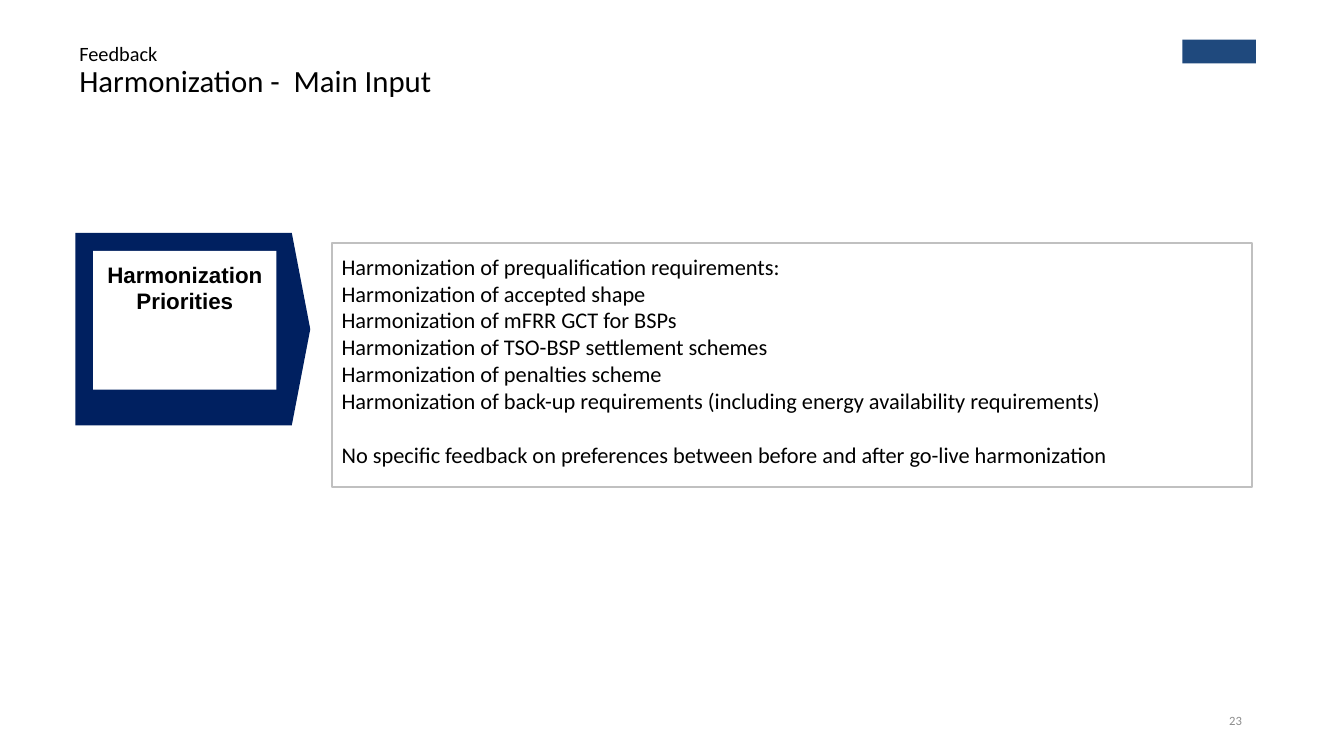
from pptx import Presentation
from pptx.dml.color import RGBColor
from pptx.enum.shapes import MSO_SHAPE
from pptx.enum.text import MSO_ANCHOR, PP_ALIGN
from pptx.util import Cm, Pt

RECTANGLE, ARROW = MSO_SHAPE.RECTANGLE, MSO_SHAPE.PENTAGON
TOP, MIDDLE = MSO_ANCHOR.TOP, MSO_ANCHOR.MIDDLE
LEFT, CENTER, RIGHT = PP_ALIGN.LEFT, PP_ALIGN.CENTER, PP_ALIGN.RIGHT

NAVY, BLUE, SILVER, GREY = "002060", "1F497D", "C0C0C0", "8C8C8C"
BLACK, WHITE = "000000", "FFFFFF"

PRIORITIES = [
    "Harmonization of prequalification requirements:",
    "Harmonization of accepted shape",
    "Harmonization of mFRR GCT for BSPs",
    "Harmonization of TSO-BSP settlement schemes",
    "Harmonization of penalties scheme",
    "Harmonization of back-up requirements (including energy availability requirements)",
]
REMARK = "No specific feedback on preferences between before and after go-live harmonization"


def color(hex_code):
    return RGBColor.from_string(hex_code)


def write(para, text, size=16, font="Calibri", fill=BLACK, bold=False, align=LEFT):
    para.alignment = align
    span = para.add_run()
    span.text = text
    span.font.size = Pt(size)
    span.font.name = font
    span.font.bold = bold
    span.font.color.rgb = color(fill)


def add_box(page, kind, box, fill=None, line=None):
    shape = page.shapes.add_shape(kind, *map(Cm, box))
    shape.shadow.inherit = False
    if fill:
        shape.fill.solid()
        shape.fill.fore_color.rgb = color(fill)
    else:
        shape.fill.background()
    if line:
        shape.line.color.rgb = color(line)
        shape.line.width = Pt(1.5)
    else:
        shape.line.fill.background()
    return shape


def set_frame(shape, anchor, inset=None):
    frame = shape.text_frame
    frame.word_wrap = True
    frame.vertical_anchor = anchor
    if inset is not None:
        frame.margin_left = frame.margin_right = Cm(inset)
        frame.margin_top = frame.margin_bottom = Cm(inset)
    return frame


def add_header(page, box):
    frame = set_frame(page.shapes.add_textbox(*map(Cm, box)), MIDDLE)
    para = frame.paragraphs[0]
    para.line_spacing = 0.9
    write(para, "Feedback", size=14.5)
    para.add_line_break()
    write(para, "Harmonization -  Main Input", size=22)


def add_topic_arrow(page, box):
    left, top, width, height = box
    arrow = add_box(page, ARROW, box, fill=NAVY)
    arrow.adjustments[0] = 0.096
    # White label inside the arrow
    border = 0.45
    label_box = (left + border, top + border, width - 1.3, height - 3 * border)
    label = add_box(page, RECTANGLE, label_box, fill=WHITE)
    para = set_frame(label, TOP, 0.25).paragraphs[0]
    write(para, "Harmonization Priorities", font="Arial", bold=True, align=CENTER)


def add_feedback(page, box):
    frame = set_frame(add_box(page, RECTANGLE, box, line=SILVER), TOP, 0.25)
    for index, text in enumerate(PRIORITIES):
        para = frame.add_paragraph() if index else frame.paragraphs[0]
        write(para, text)
    # The remark stands one line apart from the list
    para = frame.add_paragraph()
    para.space_before = Pt(19.5)
    write(para, REMARK)


def add_page_number(page, box):
    frame = set_frame(page.shapes.add_textbox(*map(Cm, box)), MIDDLE)
    write(frame.paragraphs[0], "23", size=9, fill=GREY, align=RIGHT)


def main():
    deck = Presentation()
    deck.slide_width, deck.slide_height = Cm(33.87), Cm(19.05)
    page = deck.slides.add_slide(deck.slide_layouts[6])

    add_header(page, (1.75, 0.91, 25.27, 1.78))
    # Plain block in the project mark's corner
    add_box(page, RECTANGLE, (29.8, 1, 1.85, 0.6), fill=BLUE)
    add_topic_arrow(page, (1.9, 5.87, 5.92, 4.85))
    add_feedback(page, (8.36, 6.12, 23.19, 6.15))
    add_page_number(page, (23.93, 17.65, 7.62, 1.02))

    deck.save("out.pptx")


if __name__ == "__main__":
    main()
